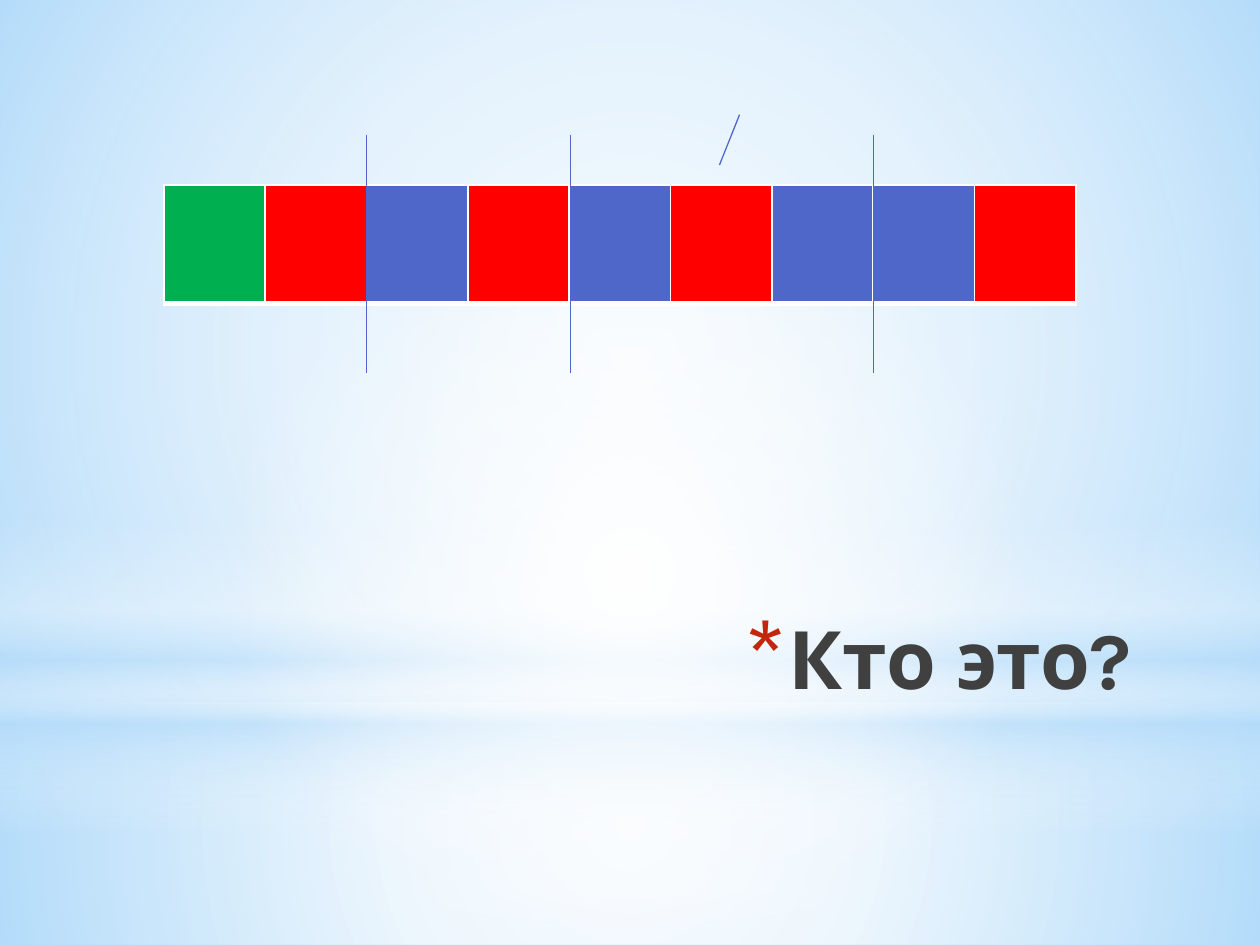
from pptx import Presentation
from pptx import util as u
from pptx.dml.color import RGBColor
from pptx.enum import shapes, text
from pptx.oxml import parse_xml
from pptx.oxml.ns import nsdecls, qn

COLORS = {
    "white": "FFFFFF", "sky": "B4DCFA", "blue": "4E67C8", "red": "FF0000",
    "green": "00B050", "text": "404040", "bullet": "C3260C",
}
RADIAL = ('<a:path path="circle"><a:fillToRect l="50000" t="50000" '
          'r="50000" b="50000"/></a:path>')
VERTICAL = '<a:lin ang="5400000" scaled="0"/>'


def rgb(name):
    return RGBColor.from_string(COLORS[name])


def element(xml):
    head, rest = xml.split(" ", 1)
    return parse_xml(f"{head} {nsdecls('a')} {rest}")


class SlideBuilder:
    font = "Karla"
    line_width = u.Pt(0.75)

    def __init__(self, slide):
        self.slide = slide

    def background(self, color):
        fill = self.slide.background.fill
        fill.solid()
        fill.fore_color.rgb = rgb(color)

    def glow(self, kind, top, height, stops, direction):
        shape = self.slide.shapes.add_shape(
            kind, 0, u.Inches(top), u.Inches(10), u.Inches(height))
        shape.shadow.inherit = False
        shape.line.fill.background()
        shape.fill.background()
        stop_xml = "".join(
            f'<a:gs pos="{pos * 1000}"><a:srgbClr val="{COLORS[color]}">'
            f'<a:alpha val="{alpha * 1000}"/></a:srgbClr></a:gs>'
            for pos, color, alpha in stops)
        gradient = element(f'<a:gradFill rotWithShape="1"><a:gsLst>{stop_xml}'
                           f'</a:gsLst>{direction}</a:gradFill>')
        properties = shape.element.spPr
        properties.replace(properties.find(qn("a:noFill")), gradient)

    def title(self, words, left, top, width, height):
        box = self.slide.shapes.title
        box.element.getparent().append(box.element)
        box.left, box.top = u.Inches(left), u.Inches(top)
        box.width, box.height = u.Inches(width), u.Inches(height)
        frame = box.text_frame
        frame.word_wrap = True
        frame.auto_size = text.MSO_AUTO_SIZE.NONE
        frame.vertical_anchor = text.MSO_ANCHOR.TOP
        para = frame.paragraphs[0]
        para.alignment = text.PP_ALIGN.RIGHT
        properties = para._p.get_or_add_pPr()
        properties.set("marL", str(u.Inches(0.35)))
        properties.set("indent", str(u.Inches(-0.35)))
        for xml in (
            f'<a:buClr ><a:srgbClr val="{COLORS["bullet"]}"/></a:buClr>',
            '<a:buSzPct val="128000"/>',
            f'<a:buFont typeface="{self.font}"/>',
            '<a:buChar char="*"/>',
        ):
            properties.append(element(xml))
        span = para.add_run()
        span.text = words
        span.font.name = self.font
        span.font.size = u.Pt(46)
        span.font.bold = True
        span.font.color.rgb = rgb("text")

    def strip(self, fills, left, top, width, height):
        table = self.slide.shapes.add_table(
            1, len(fills), u.Inches(left), u.Inches(top),
            u.Inches(width), u.Inches(height)).table
        for cell, color in zip(table.rows[0].cells, fills):
            properties = cell._tc.get_or_add_tcPr()
            for side, points in (("L", 1), ("R", 1), ("T", 1), ("B", 3)):
                properties.append(element(
                    f'<a:ln{side} w="{u.Pt(points)}"><a:solidFill><a:srgbClr '
                    f'val="{COLORS["white"]}"/></a:solidFill></a:ln{side}>'))
            cell.fill.solid()
            cell.fill.fore_color.rgb = rgb(color)

    def line(self, x1, y1, x2, y2):
        line = self.slide.shapes.add_connector(
            shapes.MSO_CONNECTOR.STRAIGHT,
            u.Inches(x1), u.Inches(y1), u.Inches(x2), u.Inches(y2))
        line.line.color.rgb = rgb("blue")
        line.line.width = self.line_width
        line.element.spPr.append(element("<a:effectLst />"))


def main():
    deck = Presentation()
    deck.slide_width, deck.slide_height = u.Inches(10), u.Inches(7.5)
    builder = SlideBuilder(deck.slides.add_slide(deck.slide_layouts[5]))
    rectangle = shapes.MSO_SHAPE.RECTANGLE

    builder.background("sky")
    builder.glow(rectangle, 5.58, 1.92, [
        (0, "white", 91), (37, "white", 76), (100, "sky", 79)], RADIAL)
    builder.glow(rectangle, 0, 5.58, [
        (0, "white", 89), (48, "white", 62), (100, "sky", 79)], RADIAL)
    builder.glow(rectangle, 4.12, 2.5, [
        (0, "white", 0), (29, "white", 30), (45, "sky", 40),
        (55, "white", 26), (65, "sky", 60), (100, "white", 0)], VERTICAL)
    builder.glow(shapes.MSO_SHAPE.OVAL, 1.75, 5.58, [
        (0, "white", 100), (56, "white", 0)], RADIAL)

    builder.title("Кто это?", 1.96, 4.78, 7.12, 1.25)
    builder.strip(["green", "red", "blue", "red", "blue", "red",
                   "blue", "blue", "red"], 1.3, 1.47, 7.24, 0.94)
    for x in (2.91, 4.53, 6.93):
        builder.line(x, 1.07, x, 2.96)
    builder.line(5.87, 0.91, 5.71, 1.31)

    deck.save("out.pptx")


if __name__ == "__main__":
    main()
